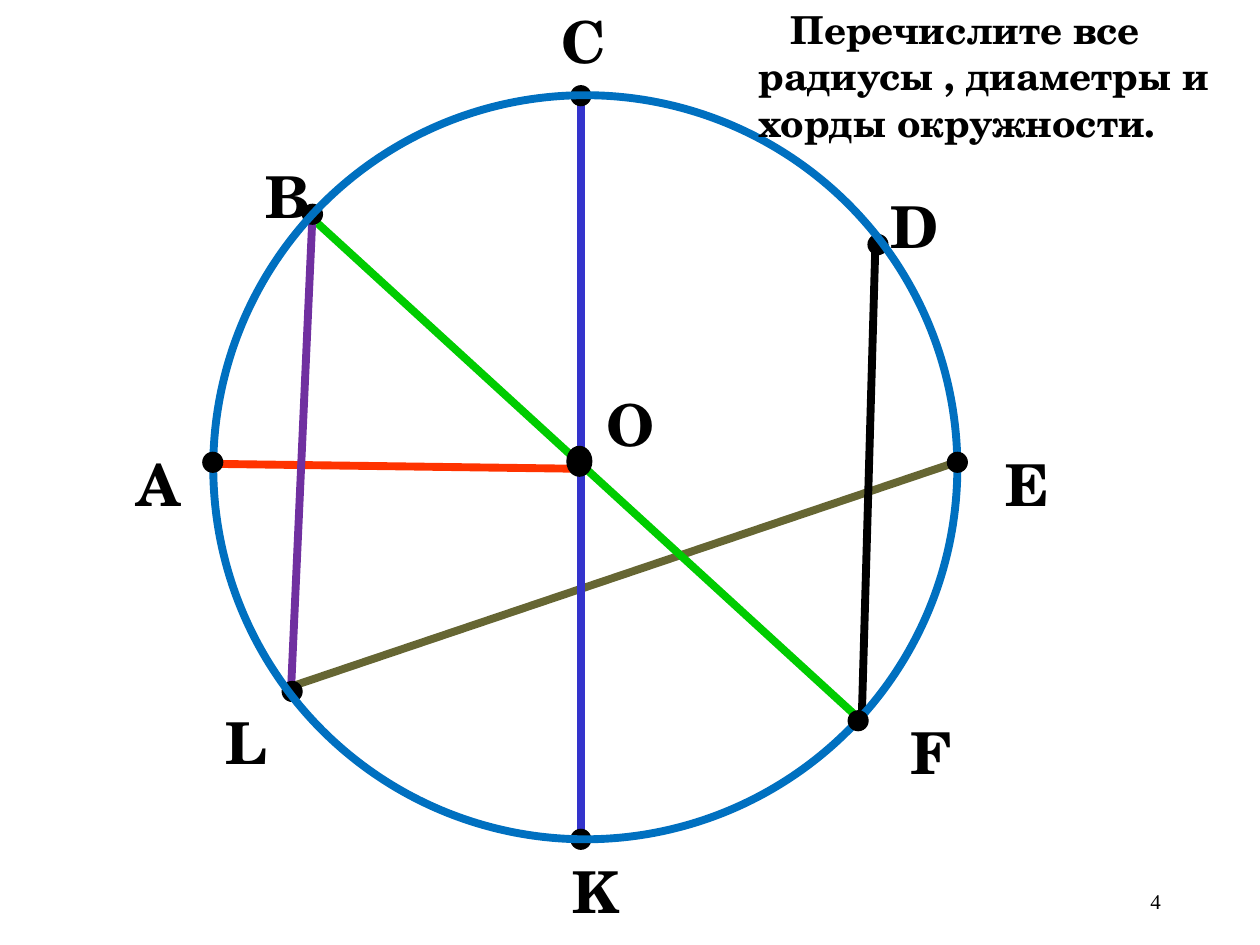
from pptx import Presentation
from pptx.dml.color import RGBColor
from pptx.enum.shapes import MSO_CONNECTOR, MSO_SHAPE
from pptx.enum.text import MSO_ANCHOR, PP_ALIGN
from pptx.oxml.ns import qn
from pptx.util import Cm, Pt
from lxml.etree import SubElement

SERIF, PLAIN = "TeX Gyre Schola", "Times New Roman"
BLACK, BLUE = "000000", "0070C0"
CIRCLE = (11.8, 9.42, 15, 15)  # centre x, centre y, width, height
CENTRE = (11.68, 9.3, 0.5, 0.6)
DOT = 0.4

# colour, start, end
SEGMENTS = [
    ("666633", (5.87, 13.84), (19.18, 9.35)),
    ("3333CC", (11.71, 1.73), (11.71, 16.92)),
    ("00CC00", (6.4, 4.5), (17.2, 14.38)),
    ("FF3300", (4.24, 9.35), (11.61, 9.45)),
    ("7030A0", (6.3, 4.32), (5.87, 13.84)),
    (BLACK, (17.37, 14.55), (17.65, 4.85)),
]
DOTS_BEHIND = [(6.3, 4.32), (5.89, 13.94), (11.71, 1.93), (17.7, 4.93), (11.71, 16.92)]
DOTS_FRONT = [(4.29, 9.32), (17.3, 14.53), (19.3, 9.32)]
# letter, left, top, width
LABELS = [
    ("А", 2.49, 8.92, 1.4),
    ("В", 5.11, 3.12, 1.4),
    ("С", 11.07, 0, 1.19),
    ("D", 17.7, 3.73, 0.99),
    ("E", 19.71, 8.92, 2.01),
    ("F", 18.11, 14.33, 1.19),
    ("K", 11.3, 17.12, 1.4),
    ("L", 4.29, 14.12, 0.79),
    ("O", 11.91, 7.72, 1.6),
]
TASK = "Перечислите все радиусы , диаметры и хорды окружности."


def rgb(value):
    return RGBColor.from_string(value)


def add_ellipse(s, cx, cy, w, h, line, width, fill=None):
    sp = s.shapes.add_shape(MSO_SHAPE.OVAL, Cm(cx - w / 2), Cm(cy - h / 2), Cm(w), Cm(h))
    sp.shadow.inherit = False
    if fill:
        sp.fill.solid()
        sp.fill.fore_color.rgb = rgb(fill)
    else:
        sp.fill.background()
    sp.line.color.rgb = rgb(line)
    sp.line.width = Pt(width)


def add_dots(s, centres):
    for x, y in centres:
        add_ellipse(s, x, y, DOT, DOT, BLACK, 0.75, BLACK)


def add_segment(s, color, start, end):
    line = s.shapes.add_connector(MSO_CONNECTOR.STRAIGHT, *map(Cm, start + end))
    line.line.color.rgb = rgb(color)
    line.line.width = Pt(4.5)
    SubElement(line._element.spPr, qn("a:effectLst"))


def add_text(s, text, box, size, align, font=SERIF, bold=True, anchor=MSO_ANCHOR.TOP):
    tf = s.shapes.add_textbox(*map(Cm, box)).text_frame
    tf.word_wrap = True
    tf.vertical_anchor = anchor
    p = tf.paragraphs[0]
    p.alignment = align
    r = p.add_run()
    r.text = text
    r.font.name, r.font.size, r.font.bold = font, Pt(size), bold
    r.font.color.rgb = rgb(BLACK)
    return p


def main():
    prs = Presentation()
    prs.slide_width, prs.slide_height = Cm(25.4), Cm(19.05)
    s = prs.slides.add_slide(prs.slide_layouts[6])

    for segment in SEGMENTS:
        add_segment(s, *segment)
    add_dots(s, DOTS_BEHIND)
    add_ellipse(s, *CIRCLE, BLUE, 4.5)
    add_ellipse(s, *CENTRE, BLACK, 0.75, BLACK)
    add_dots(s, DOTS_FRONT)

    for letter, left, top, width in LABELS:
        add_text(s, letter, (left, top, width, 1.68), 33, PP_ALIGN.CENTER)
    task = add_text(s, TASK, (15.04, 0, 10.36, 3.07), 22, PP_ALIGN.LEFT)
    task._p.get_or_add_pPr().set("indent", str(Cm(0.65)))
    add_text(s, "4", (17.93, 17.65, 5.72, 1.02), 12, PP_ALIGN.RIGHT,
             PLAIN, False, MSO_ANCHOR.MIDDLE)

    prs.save("out.pptx")


if __name__ == "__main__":
    main()
